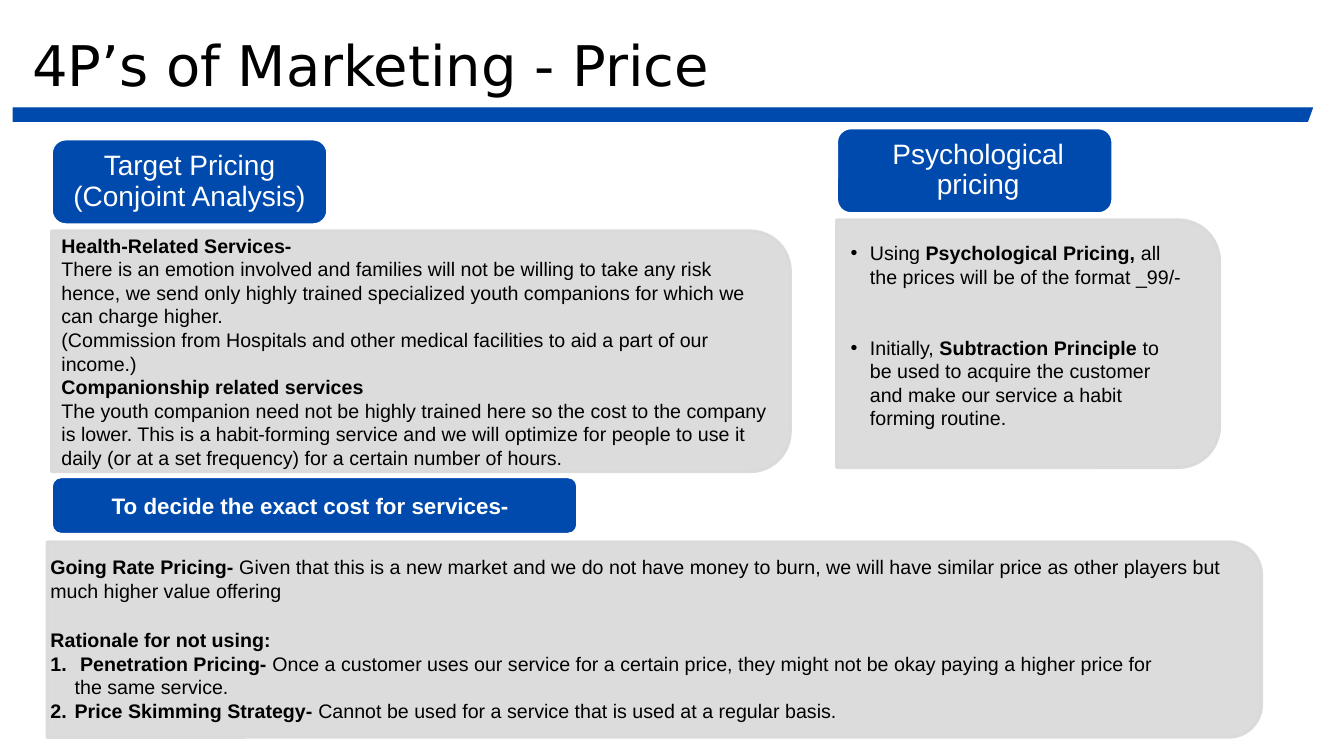
from dataclasses import dataclass
from typing import NamedTuple

from pptx import Presentation, util as u
from pptx.dml.color import RGBColor
from pptx.enum import shapes, text
from pptx.oxml.ns import qn
from lxml import etree

BLUE = RGBColor(0x00, 0x4A, 0xAD)
GREY = RGBColor(0xD9, 0xD9, 0xD9)
WHITE = RGBColor(0xFF, 0xFF, 0xFF)
BLACK = RGBColor(0x00, 0x00, 0x00)
BODY_FONT = "Arial"
TITLE_FONT = "DejaVu Sans"
SLIDE_WIDTH, SLIDE_HEIGHT = u.Inches(13.33), u.Inches(7.5)
MARGIN = 3.83
RIGHT_COLUMN = 62.25


class Frame(NamedTuple):
    """A rectangle in percent of the slide's width and height."""
    left: float
    top: float
    width: float
    height: float

    def emu(self) -> tuple[int, int, int, int]:
        return (int(SLIDE_WIDTH * self.left / 100), int(SLIDE_HEIGHT * self.top / 100),
                int(SLIDE_WIDTH * self.width / 100), int(SLIDE_HEIGHT * self.height / 100))


class Span(NamedTuple):
    text: str
    bold: bool = False


@dataclass(frozen=True)
class Para:
    spans: list[Span]
    marker: str = ""
    indent: float = 0
    before: float = 0


@dataclass(frozen=True)
class Heading:
    frame: Frame
    text: str
    size: int = 20
    bold: bool = False
    centred: bool = True
    inset_left: float = 0.08


TITLE = Frame(1.65, 3.33, 96.68, 10.27)
BANNER = Frame(0.98, 14.27, 96.68, 1.8)
BANNER_SLANT = 0.37

HEADINGS = [
    Heading(Frame(MARGIN, 18.4, 20.55, 11.33), "Target Pricing\v(Conjoint Analysis)"),
    Heading(Frame(RIGHT_COLUMN, 16.93, 20.55, 11.33), "Psychological pricing", inset_left=0.15),
    Heading(Frame(MARGIN, 63.07, 39.15, 7.6), "To decide the exact cost for services-",
            size=16, bold=True, centred=False, inset_left=0.57),
]
PANELS = [
    Frame(MARGIN, 30.53, 54.98, 31.87),
    Frame(RIGHT_COLUMN, 29.07, 28.5, 32.8),
    Frame(3.49, 71.67, 90.38, 25.87),
]

TARGET_FRAME = Frame(MARGIN, 30.27, 54.6, 32.6)
TARGET = [
    Para([Span("Health-Related Services-", True)]),
    Para([Span("There is an emotion involved and families will not be willing to take any risk "
               "hence, we send only highly trained specialized youth companions for which we "
               "can charge higher.")]),
    Para([Span("(Commission from Hospitals and other medical facilities to aid a part of our "
               "income.)")]),
    Para([Span("Companionship related services", True)]),
    Para([Span("The youth companion need not be highly trained here so the cost to the company "
               "is lower. This is a habit-forming service and we will optimize for people to "
               "use it daily (or at a set frequency) for a certain number of hours.")]),
]
PSYCHOLOGICAL_FRAME = Frame(62.55, 31.2, 26.1, 29.33)
PSYCHOLOGICAL = [
    Para([Span("Using"), Span(" Psychological Pricing, ", True),
          Span("all the prices will be of the format _99/-")], "bullet", 0.19),
    Para([Span("Initially, "), Span("Subtraction Principle ", True),
          Span("to be used to acquire the customer and make our service a habit "
               "forming routine.")], "bullet", 0.19, before=34),
]
GOING_RATE_FRAME = Frame(3, 72.8, 89.18, 8)
GOING_RATE = [
    Para([Span("Going Rate Pricing- ", True),
          Span("Given that this is a new market and we do not have money to burn, we will have "
               "similar price as other players but much higher value offering")]),
]
RATIONALE_FRAME = Frame(3, 82.4, 85.65, 13.87)
RATIONALE = [
    Para([Span("Rationale for not using:", True)]),
    Para([Span(" Penetration Pricing- ", True),
          Span("Once a customer uses our service for a certain price, they might not be okay "
               "paying a higher price for the same service.")], "number", 0.24),
    Para([Span("Price Skimming Strategy- ", True),
          Span("Cannot be used for a service that is used at a regular basis.")], "number", 0.24),
]


def style(span, size: float, color: RGBColor, bold: bool = False, name: str = BODY_FONT) -> None:
    span.font.size = u.Pt(size)
    span.font.name = name
    span.font.bold = bold
    span.font.color.rgb = color


def place(box, frame: Frame) -> None:
    """Move a placeholder to its frame and in front of everything drawn so far."""
    box.left, box.top, box.width, box.height = frame.emu()
    box.element.getparent().append(box.element)


def set_marker(para, marker: str, indent: float) -> None:
    props = para._p.get_or_add_pPr()
    props.set("marL", str(u.Inches(indent)))
    props.set("indent", str(-u.Inches(indent)))
    if marker == "bullet":
        etree.SubElement(props, qn("a:buFont"), typeface=BODY_FONT)
        etree.SubElement(props, qn("a:buChar"), char="•")
    elif marker == "number":
        etree.SubElement(props, qn("a:buAutoNum"), type="arabicPeriod")
    else:
        etree.SubElement(props, qn("a:buNone"))


def write(box, paras: list[Para]) -> None:
    frame = box.text_frame
    frame.word_wrap = True
    frame.auto_size = text.MSO_AUTO_SIZE.NONE
    frame.vertical_anchor = text.MSO_ANCHOR.TOP
    for index, content in enumerate(paras):
        para = frame.paragraphs[0] if index == 0 else frame.add_paragraph()
        para.space_before = u.Pt(content.before)
        set_marker(para, content.marker, content.indent)
        for piece in content.spans:
            span = para.add_run()
            span.text = piece.text
            style(span, 14, BLACK, piece.bold)


def add_banner(page) -> None:
    left, top, width, height = BANNER.emu()
    right, bottom = left + width, top + height
    slant = int(SLIDE_WIDTH * BANNER_SLANT / 100)
    builder = page.shapes.build_freeform(right, top, scale=1.0)
    builder.add_line_segments([(left, top), (left, bottom), (right - slant, bottom)], close=True)
    banner = builder.convert_to_shape()
    banner.shadow.inherit = False
    banner.fill.solid()
    banner.fill.fore_color.rgb = BLUE
    banner.line.color.rgb = BLUE
    banner.line.width = u.Pt(0.75)


def add_panel(page, frame: Frame) -> None:
    """Draw a grey panel rounded at its right: a top-rounded shape turned a quarter."""
    left, top, width, height = frame.emu()
    shift = (width - height) // 2
    panel = page.shapes.add_shape(shapes.MSO_SHAPE.ROUND_2_SAME_RECTANGLE,
                                  left + shift, top - shift, height, width)
    panel.rotation = 90
    panel.shadow.inherit = False
    panel.fill.solid()
    panel.fill.fore_color.rgb = GREY
    panel.line.color.rgb = GREY
    panel.line.width = u.Pt(2)
    for color in panel.element.spPr.iter(qn("a:srgbClr")):
        etree.SubElement(color, qn("a:alpha"), val="90000")


def add_heading(page, heading: Heading) -> None:
    box = page.shapes.add_shape(shapes.MSO_SHAPE.ROUNDED_RECTANGLE, *heading.frame.emu())
    box.shadow.inherit = False
    box.fill.solid()
    box.fill.fore_color.rgb = BLUE
    box.line.color.rgb = WHITE
    box.line.width = u.Pt(2)
    frame = box.text_frame
    frame.word_wrap = True
    frame.vertical_anchor = text.MSO_ANCHOR.MIDDLE
    frame.margin_left, frame.margin_right = u.Inches(heading.inset_left), u.Inches(0.08)
    frame.margin_top = frame.margin_bottom = u.Inches(0.04)
    para = frame.paragraphs[0]
    para.text = heading.text
    para.alignment = text.PP_ALIGN.CENTER if heading.centred else text.PP_ALIGN.LEFT
    if heading.centred:
        para.line_spacing = 0.9
        para.space_after = u.Pt(7)
    for span in para.runs:
        style(span, heading.size, WHITE, heading.bold)


def main() -> None:
    deck = Presentation()
    deck.slide_width, deck.slide_height = SLIDE_WIDTH, SLIDE_HEIGHT
    page = deck.slides.add_slide(deck.slide_layouts.get_by_name("Two Content"))
    title, psychological, rationale = page.placeholders
    add_banner(page)
    place(title, TITLE)
    title.text_frame.text = "4P’s of Marketing - Price"
    title.text_frame.vertical_anchor = text.MSO_ANCHOR.TOP
    title.text_frame.paragraphs[0].alignment = text.PP_ALIGN.LEFT
    style(title.text_frame.paragraphs[0].runs[0], 40, BLACK, name=TITLE_FONT)
    for frame in PANELS:
        add_panel(page, frame)
    for heading in HEADINGS:
        add_heading(page, heading)
    for frame, paras in ((TARGET_FRAME, TARGET), (GOING_RATE_FRAME, GOING_RATE)):
        write(page.shapes.add_textbox(*frame.emu()), paras)
    for box, frame, paras in ((psychological, PSYCHOLOGICAL_FRAME, PSYCHOLOGICAL),
                              (rationale, RATIONALE_FRAME, RATIONALE)):
        place(box, frame)
        write(box, paras)
    deck.save("out.pptx")


if __name__ == "__main__":
    main()
